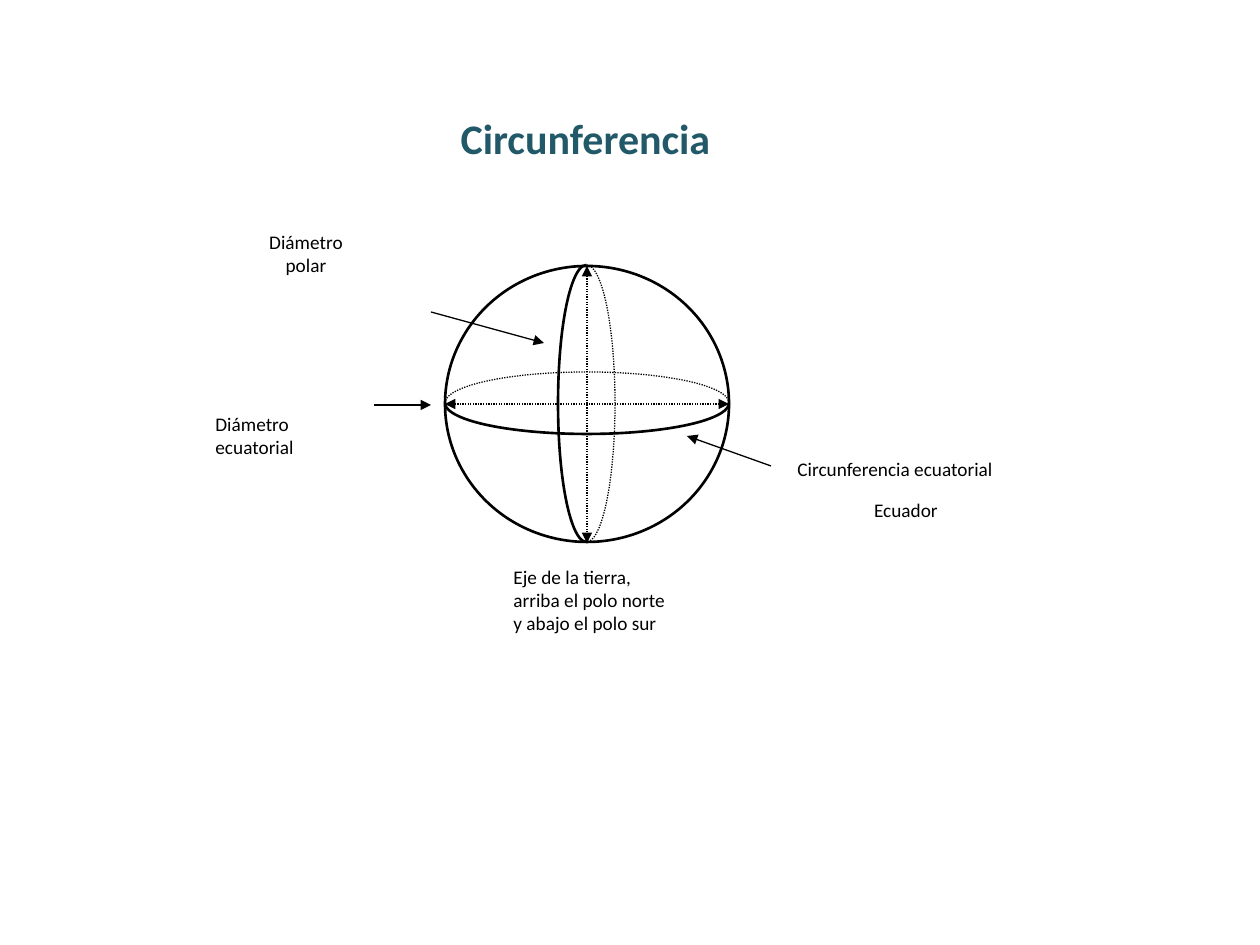
"""Build the slide on the circumference of the Earth."""
from pptx import Presentation
from pptx.dml.color import RGBColor
from pptx.enum.dml import MSO_LINE
from pptx.enum.shapes import MSO_CONNECTOR, MSO_SHAPE
from pptx.enum.text import MSO_ANCHOR, PP_ALIGN
from pptx.oxml.ns import qn
from pptx.util import Emu, Pt
from lxml import etree

BLACK = RGBColor(0x00, 0x00, 0x00)
WHITE = RGBColor(0xFF, 0xFF, 0xFF)
TEAL = RGBColor(0x21, 0x59, 0x68)
LEFT, CENTER = PP_ALIGN.LEFT, PP_ALIGN.CENTER
TOP = MSO_ANCHOR.TOP
OVAL, ARC, RECTANGLE = MSO_SHAPE.OVAL, MSO_SHAPE.ARC, MSO_SHAPE.RECTANGLE
STRAIGHT = MSO_CONNECTOR.STRAIGHT
DOTTED = MSO_LINE.ROUND_DOT
FONT = "Calibri"
PX = 914400 / 126
THIN, THICK = 0.75, 1.5

TITLE = ("Circunferencia", (372, 106, 427, 64))
SPHERE = (445, 266, 284, 276)
EQUATOR = (445, 372, 284, 62)
MERIDIAN = (558, 265, 57, 277)
AXES = [((587, 266), (587, 543)), ((445, 404), (729, 404))]
HALF_CIRCLES = [
    (EQUATOR, 180, 0, False),
    (EQUATOR, 0, 180, True),
    (MERIDIAN, 90, 270, True),
    (MERIDIAN, 270, 90, False),
]
LABELS = [
    ((785, 451, 242, 77), [("Circunferencia ecuatorial", LEFT), ("Ecuador", CENTER)]),
    ((501, 559, 184, 92), [("Eje de la tierra, arriba el polo norte y abajo el polo sur", LEFT)]),
    ((203, 406, 142, 107), [("Diámetro ecuatorial", LEFT)]),
    ((243, 224, 126, 88), [("Diámetro polar", CENTER)]),
]
POINTERS = [((771, 466), (687, 436)), ((431, 312), (544, 343)), ((374, 405), (431, 405))]


def emu(*lengths):
    return [Emu(round(length * PX)) for length in lengths]


def draw_line(line, width, dotted=False):
    line.color.rgb = BLACK
    line.width = Pt(width)
    if dotted:
        line.dash_style = DOTTED


def add_plain(slide, preset, box):
    plain = slide.shapes.add_shape(preset, *emu(*box))
    plain.shadow.inherit = False
    plain.fill.solid()
    plain.fill.fore_color.rgb = WHITE
    return plain


def add_arrow(slide, start, end, ends, dotted=False):
    arrow = slide.shapes.add_connector(STRAIGHT, *emu(*start, *end))
    draw_line(arrow.line, THIN, dotted)
    outline = arrow.line._get_or_add_ln()
    for tip in ends:
        etree.SubElement(outline, qn(f"a:{tip}"), type="triangle")
    etree.SubElement(arrow._element.spPr, qn("a:effectLst"))


def add_half_circle(slide, box, start, end, front):
    half = add_plain(slide, ARC, box)
    half.fill.background()
    half.adjustments[0] = start * 0.6
    half.adjustments[1] = end * 0.6
    draw_line(half.line, THICK if front else THIN, not front)


def write(paragraph, wording, align, size, color, bold=False):
    paragraph.alignment = align
    run = paragraph.add_run()
    run.text = wording
    run.font.name = FONT
    run.font.size = Pt(size)
    run.font.bold = bold
    run.font.color.rgb = color


def add_label(slide, box, lines):
    label = add_plain(slide, RECTANGLE, box)
    label.line.fill.background()
    frame = label.text_frame
    frame.word_wrap = True
    frame.vertical_anchor = TOP
    for index, (wording, align) in enumerate(lines):
        paragraph = frame.add_paragraph() if index else frame.paragraphs[0]
        paragraph.space_after = Pt(10)
        write(paragraph, wording, align, 11, BLACK)


def main():
    deck = Presentation()
    deck.slide_width, deck.slide_height = emu(1260, 945)
    slide = deck.slides.add_slide(deck.slide_layouts[6])

    sphere = add_plain(slide, OVAL, SPHERE)
    draw_line(sphere.line, THICK)
    for start, end in AXES:
        add_arrow(slide, start, end, ("headEnd", "tailEnd"), dotted=True)
    for half in HALF_CIRCLES:
        add_half_circle(slide, *half)
    for box, lines in LABELS:
        add_label(slide, box, lines)
    for start, end in POINTERS:
        add_arrow(slide, start, end, ("tailEnd",))

    wording, box = TITLE
    title = slide.shapes.add_textbox(*emu(*box)).text_frame
    title.word_wrap = True
    write(title.paragraphs[0], wording, CENTER, 24, TEAL, bold=True)
    deck.save("out.pptx")


if __name__ == "__main__":
    main()
